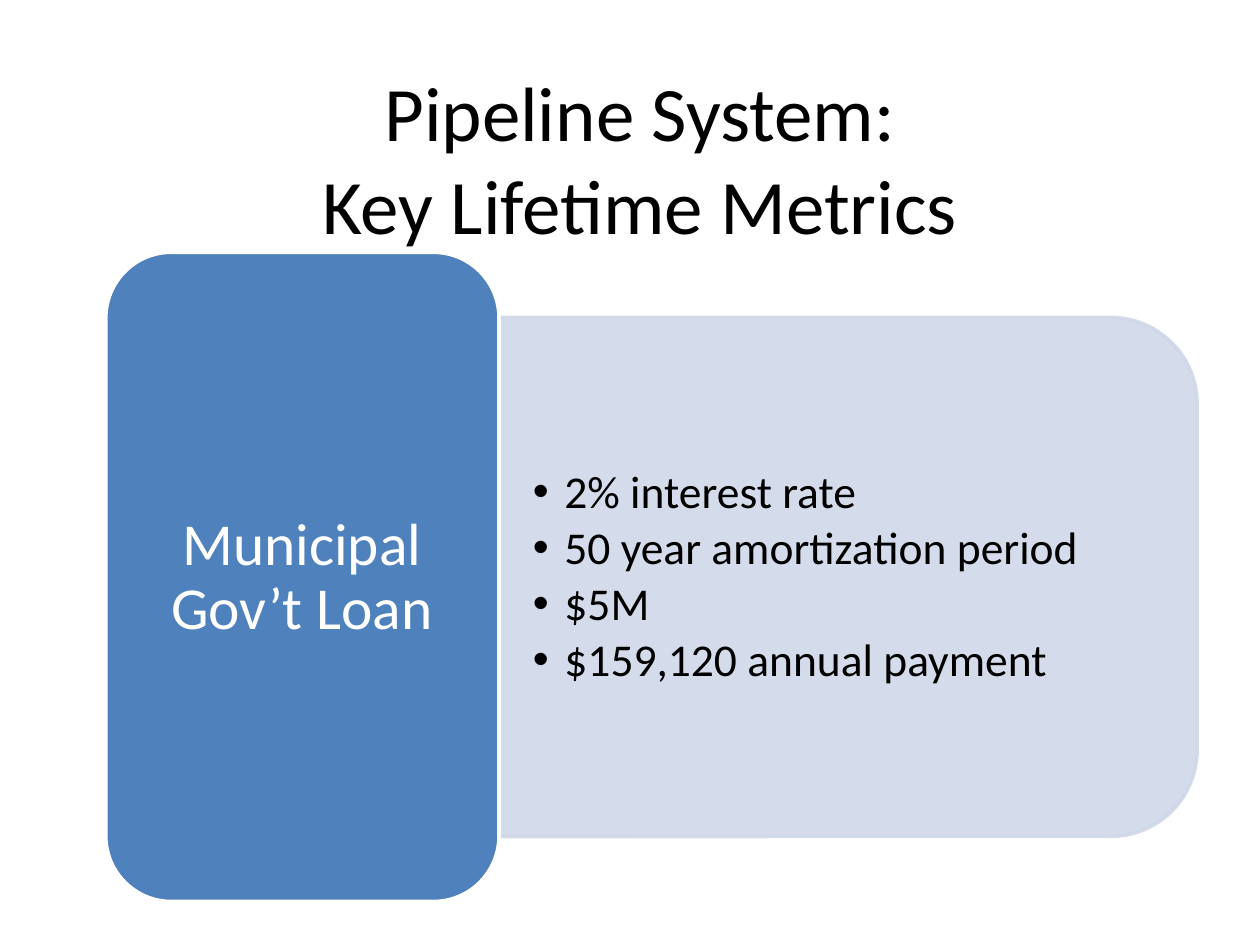
import dataclasses
import typing

import lxml.etree
import pptx
import pptx.dml.color
import pptx.enum.shapes
import pptx.enum.text
import pptx.oxml.ns
import pptx.util

WIDE, HIGH = 10, 7.5
KIND = pptx.enum.shapes.MSO_SHAPE
ALIGN = pptx.enum.text.PP_ALIGN


@dataclasses.dataclass
class Box:
    left: float
    top: float
    width: float
    height: float

    def place(self) -> list[int]:
        parts = (self.left * WIDE, self.top * HIGH, self.width * WIDE, self.height * HIGH)
        return [pptx.util.Inches(part) for part in parts]


@dataclasses.dataclass
class Panel:
    kind: KIND
    box: Box
    fill: str
    line: str
    turn: int = 0
    alpha: int = 100


@dataclasses.dataclass
class Label:
    box: Box
    lines: list[str]
    size: int
    color: str
    inset: tuple[float, float]
    align: ALIGN = ALIGN.CENTER
    pitch: float = 1.0
    after: float = 0
    indent: float = 0


PANELS = [
    Panel(KIND.ROUND_2_SAME_RECTANGLE, Box(0.467, 0.241, 0.412, 0.739),
          "D0D8E8", "D0D8E8", 90, 90),
    Panel(KIND.ROUNDED_RECTANGLE, Box(0.084, 0.267, 0.312, 0.687), "4F81BD", "FFFFFF"),
]

LABELS = [
    Label(Box(0.083, 0.059, 0.85, 0.215), ["Pipeline System:\vKey Lifetime Metrics"],
          44, "000000", (0.1, 0.05)),
    Label(Box(0.396, 0.363, 0.534, 0.496),
          ["2% interest rate", "50 year amortization period", "$5M",
           "$159,120 annual payment"],
          26, "000000", (0.27, 0.14), ALIGN.LEFT, 0.9, 3.9, 0.25),
    Label(Box(0.099, 0.288, 0.281, 0.647), ["Municipal Gov’t Loan"],
          34, "FFFFFF", (0.14, 0.07), ALIGN.CENTER, 0.9, 11.9),
]


def paint(target: typing.Any, color: str, alpha: int = 100) -> None:
    target.solid()
    target.fore_color.rgb = pptx.dml.color.RGBColor.from_string(color)
    if alpha < 100:
        node = target._xPr.find(".//" + pptx.oxml.ns.qn("a:srgbClr"))
        lxml.etree.SubElement(node, pptx.oxml.ns.qn("a:alpha"), val=str(alpha * 1000))


def bullet(para: typing.Any, indent: float) -> None:
    props = para._p.get_or_add_pPr()
    step = pptx.util.Inches(indent)
    props.set("marL", str(step))
    props.set("indent", str(-step))
    lxml.etree.SubElement(props, pptx.oxml.ns.qn("a:buFont"), typeface="Arial")
    lxml.etree.SubElement(props, pptx.oxml.ns.qn("a:buChar"), char="•")


def draw(slide: typing.Any, panel: Panel) -> None:
    shape = slide.shapes.add_shape(panel.kind, *panel.box.place())
    shape.rotation = panel.turn
    shape.shadow.inherit = False
    paint(shape.fill, panel.fill, panel.alpha)
    paint(shape.line.fill, panel.line, panel.alpha)
    shape.line.width = pptx.util.Pt(2)


def write(slide: typing.Any, label: Label) -> None:
    frame = slide.shapes.add_textbox(*label.box.place()).text_frame
    frame.word_wrap = True
    frame.vertical_anchor = pptx.enum.text.MSO_ANCHOR.MIDDLE
    side, edge = map(pptx.util.Inches, label.inset)
    frame.margin_left = frame.margin_right = side
    frame.margin_top = frame.margin_bottom = edge
    frame.text = "\n".join(label.lines)
    for para in frame.paragraphs:
        para.alignment = label.align
        para.line_spacing = label.pitch
        para.space_after = pptx.util.Pt(label.after)
        if label.indent:
            bullet(para, label.indent)
        for run in para.runs:
            run.font.name = "Calibri"
            run.font.size = pptx.util.Pt(label.size)
            paint(run.font.fill, label.color)


def main() -> None:
    deck = pptx.Presentation()
    deck.slide_width = pptx.util.Inches(WIDE)
    deck.slide_height = pptx.util.Inches(HIGH)
    slide = deck.slides.add_slide(deck.slide_layouts[6])
    for panel in PANELS:
        draw(slide, panel)
    for label in LABELS:
        write(slide, label)
    deck.save("out.pptx")


if __name__ == "__main__":
    main()
